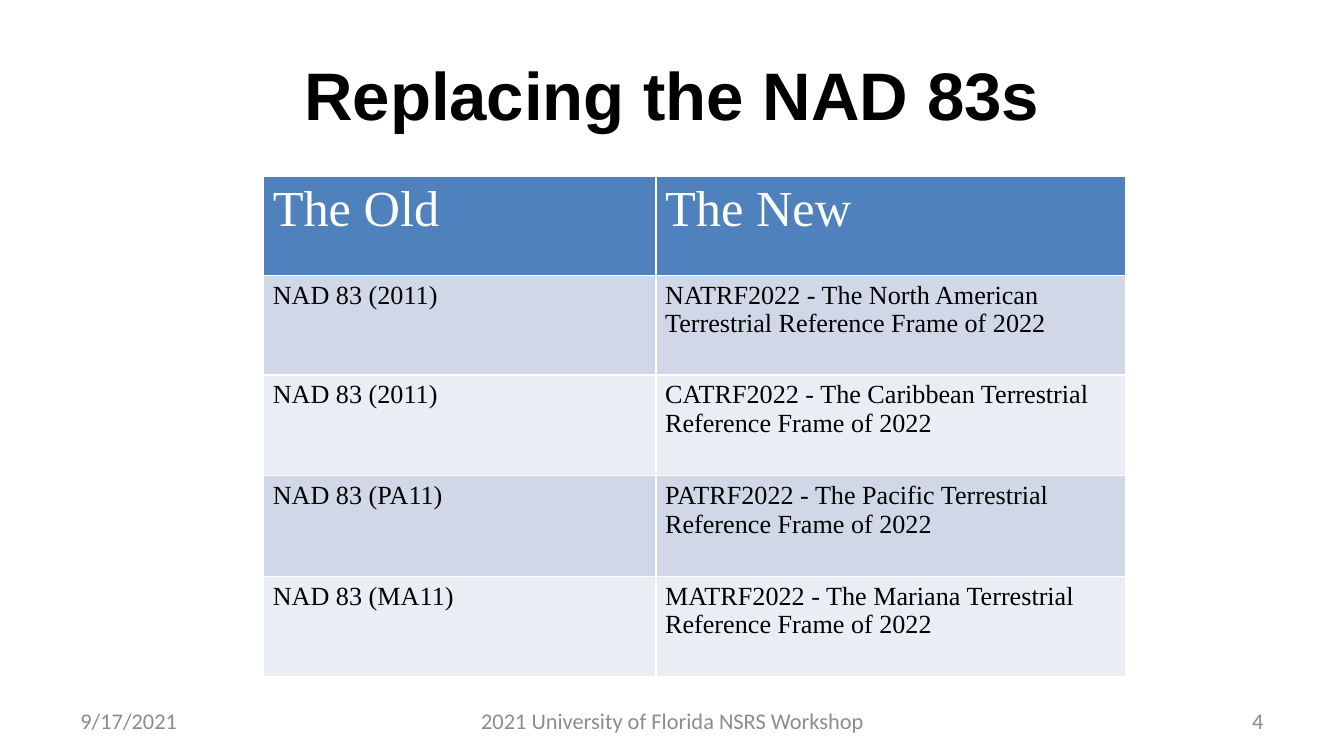
from lxml.etree import SubElement
from pptx import Presentation
from pptx.dml.color import RGBColor
from pptx.enum.text import MSO_ANCHOR, PP_ALIGN
from pptx.oxml.ns import qn
from pptx.util import Inches, Pt

COLORS = {
    "black": "000000",
    "white": "FFFFFF",
    "header": "4F81BD",
    "odd_row": "D0D8E8",
    "even_row": "E9EDF4",
    "footer": "8C8C8C",
}
FRAMES = [
    ("The Old", "The New"),
    ("NAD 83 (2011)", "NATRF2022 - The North American Terrestrial Reference Frame of 2022"),
    ("NAD 83 (2011)", "CATRF2022 - The Caribbean Terrestrial Reference Frame of 2022"),
    ("NAD 83 (PA11)", "PATRF2022 - The Pacific Terrestrial Reference Frame of 2022"),
    ("NAD 83 (MA11)", "MATRF2022 - The Mariana Terrestrial Reference Frame of 2022"),
]
COLUMN_WIDTHS = (2.92, 3.5)
ROW_HEIGHTS = (0.74, 0.74, 0.75, 0.75, 0.75)
FOOTERS = [
    ("9/17/2021", 0.5, 2.33, PP_ALIGN.LEFT),
    ("2021 University of Florida NSRS Workshop", 3.42, 3.17, PP_ALIGN.CENTER),
    ("4", 7.17, 2.33, PP_ALIGN.RIGHT),
]


def write(frame, text, *, size, font, color, bold=False, align=PP_ALIGN.LEFT,
          anchor=MSO_ANCHOR.MIDDLE):
    """Fill a text frame with one formatted paragraph."""
    frame.word_wrap = True
    frame.vertical_anchor = anchor
    paragraph = frame.paragraphs[0]
    paragraph.alignment = align
    run = paragraph.add_run()
    run.text = text
    run.font.size = Pt(size)
    run.font.name = font
    run.font.bold = bold
    run.font.color.rgb = RGBColor.from_string(COLORS[color])


def add_borders(cell):
    """Draw thin white lines on the four sides of a cell."""
    properties = cell._tc.get_or_add_tcPr()
    for side in "LRTB":
        line = SubElement(properties, qn(f"a:ln{side}"), w=str(Pt(1)))
        fill = SubElement(line, qn("a:solidFill"))
        SubElement(fill, qn("a:srgbClr"), val=COLORS["white"])


def add_title(slide, text):
    """Place and format the slide title."""
    title = slide.shapes.title
    title.left, title.top = Inches(0.5), Inches(0.23)
    title.width, title.height = Inches(9), Inches(0.94)
    write(title.text_frame, text, size=36, font="Arial", color="black",
          bold=True, align=PP_ALIGN.CENTER)


def add_frames_table(slide):
    """Add the table that pairs old and new reference frames."""
    table = slide.shapes.add_table(
        len(FRAMES), len(COLUMN_WIDTHS), Inches(1.96), Inches(1.31),
        Inches(sum(COLUMN_WIDTHS)), Inches(sum(ROW_HEIGHTS))).table
    for column, width in zip(table.columns, COLUMN_WIDTHS):
        column.width = Inches(width)
    for index, (row, height, texts) in enumerate(zip(table.rows, ROW_HEIGHTS, FRAMES)):
        row.height = Inches(height)
        is_header = index == 0
        band = "header" if is_header else "odd_row" if index % 2 else "even_row"
        for cell, text in zip(row.cells, texts):
            add_borders(cell)
            cell.fill.solid()
            cell.fill.fore_color.rgb = RGBColor.from_string(COLORS[band])
            cell.margin_left = cell.margin_right = Inches(0.07)
            cell.margin_top = cell.margin_bottom = Inches(0.04)
            write(cell.text_frame, text, size=27 if is_header else 14,
                  font="Times New Roman", color="white" if is_header else "black",
                  anchor=MSO_ANCHOR.TOP)


def add_footer(slide, text, left, width, align):
    """Add one grey text at the foot of the slide."""
    footer = slide.shapes.add_textbox(Inches(left), Inches(5.21), Inches(width), Inches(0.3))
    write(footer.text_frame, text, size=12, font="Calibri", color="footer", align=align)


def main():
    """Build the slide and save it."""
    presentation = Presentation()
    presentation.slide_width = Inches(10)
    presentation.slide_height = Inches(10) * 9 // 16
    slide = presentation.slides.add_slide(presentation.slide_layouts[5])
    add_title(slide, "Replacing the NAD 83s")
    add_frames_table(slide)
    for footer in FOOTERS:
        add_footer(slide, *footer)
    presentation.save("out.pptx")


if __name__ == "__main__":
    main()
